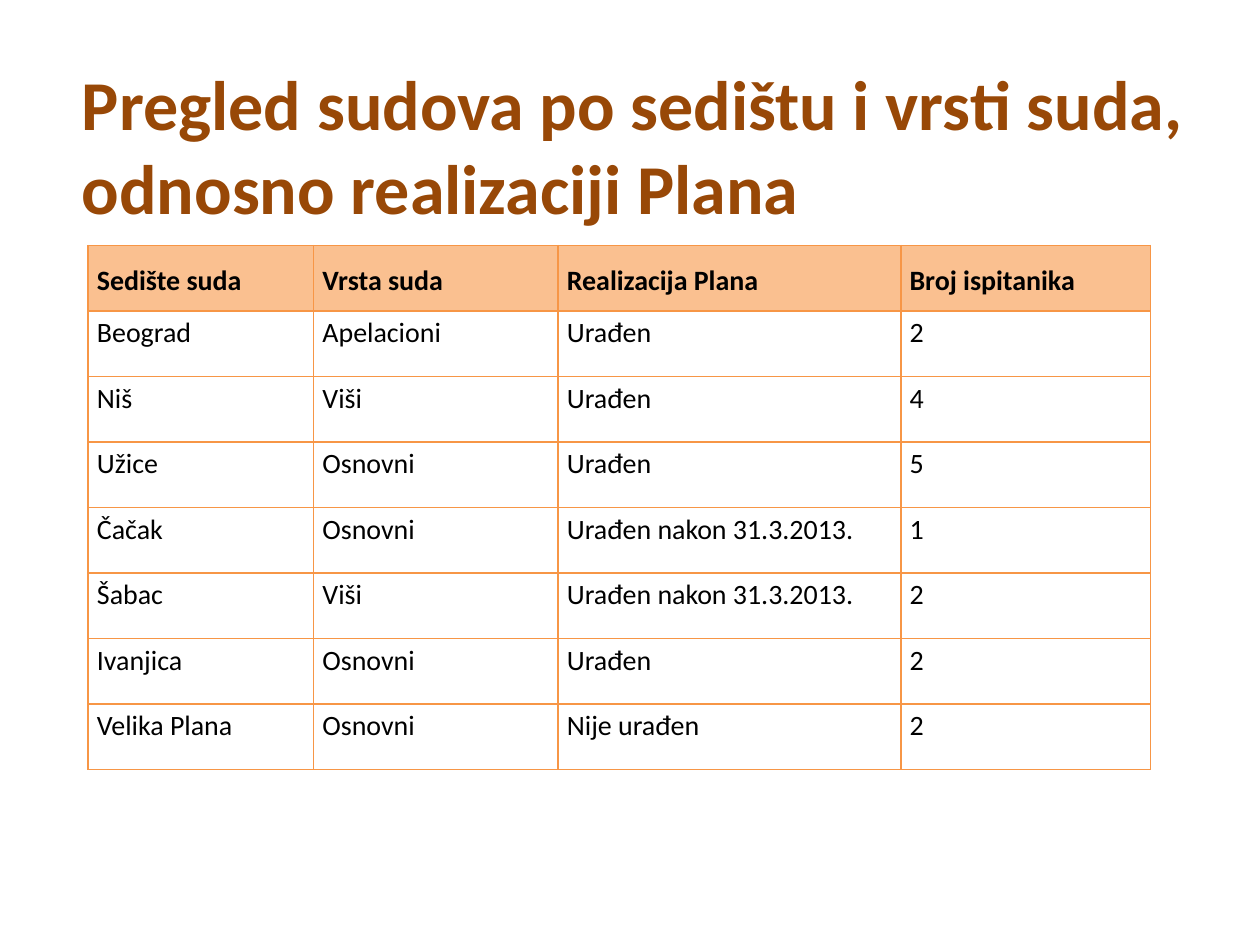
"""Build a slide with a table of courts by seat, type and plan status."""
from itertools import product

from lxml import etree
from pptx import Presentation
from pptx import util as u
from pptx.dml.color import RGBColor
from pptx.enum import text
from pptx.oxml import ns

COLORS = {"title": "984807", "text": "000000", "header": "FAC090", "border": "F79646"}

TITLE = "Pregled sudova po sedištu i vrsti suda, odnosno realizaciji Plana"
COLUMN_WIDTHS = [1.79, 1.94, 2.72, 1.98]
ROWS = [
    ["Sedište suda", "Vrsta suda", "Realizacija Plana", "Broj ispitanika"],
    ["Beograd", "Apelacioni", "Urađen", "2"],
    ["Niš", "Viši", "Urađen", "4"],
    ["Užice", "Osnovni", "Urađen", "5"],
    ["Čačak", "Osnovni", "Urađen nakon 31.3.2013.", "1"],
    ["Šabac", "Viši", "Urađen nakon 31.3.2013.", "2"],
    ["Ivanjica", "Osnovni", "Urađen", "2"],
    ["Velika Plana", "Osnovni", "Nije urađen", "2"],
]


def apply(target, values):
    """Set each named attribute on the target."""
    for name, value in values.items():
        setattr(target, name, value)


class SlideBuilder:
    """Hold the style and the current slide."""

    font_name = "Calibri"
    row_height = 0.52

    def __init__(self, presentation):
        """Add a title-only slide."""
        self.slide = presentation.slides.add_slide(presentation.slide_layouts[5])

    def format_font(self, paragraph, size, color, bold):
        """Format the font of a paragraph."""
        values = {"name": self.font_name, "size": u.Pt(size), "bold": bold}
        apply(paragraph.font, values)
        paragraph.font.color.rgb = RGBColor.from_string(COLORS[color])

    def title(self, wording, left, top, width, height):
        """Place and format the title placeholder."""
        shape = self.slide.shapes.title
        apply(shape, {"left": u.Inches(left), "top": u.Inches(top),
                      "width": u.Inches(width), "height": u.Inches(height)})
        frame = shape.text_frame
        apply(frame, {"text": wording, "word_wrap": True,
                      "auto_size": text.MSO_AUTO_SIZE.NONE,
                      "vertical_anchor": text.MSO_ANCHOR.MIDDLE,
                      "margin_bottom": u.Inches(0.72)})
        paragraph = frame.paragraphs[0]
        paragraph.alignment = text.PP_ALIGN.LEFT
        self.format_font(paragraph, 40, "title", True)

    def borders(self, cell):
        """Draw a one-point line on every side of a cell."""
        properties = cell._tc.get_or_add_tcPr()
        for index, side in enumerate(("lnL", "lnR", "lnT", "lnB")):
            line = etree.Element(ns.qn(f"a:{side}"), w=str(u.Pt(1)))
            fill = etree.SubElement(line, ns.qn("a:solidFill"))
            etree.SubElement(fill, ns.qn("a:srgbClr"), val=COLORS["border"])
            properties.insert(index, line)

    def cell(self, cell, wording, header):
        """Fill and format one table cell."""
        anchor = text.MSO_ANCHOR.MIDDLE if header else text.MSO_ANCHOR.TOP
        apply(cell, {"text": wording, "vertical_anchor": anchor,
                     "margin_left": u.Inches(0.07), "margin_right": u.Inches(0.07),
                     "margin_top": 0, "margin_bottom": 0})
        if header:
            cell.fill.solid()
            cell.fill.fore_color.rgb = RGBColor.from_string(COLORS["header"])
        else:
            cell.fill.background()
        paragraph = cell.text_frame.paragraphs[0]
        paragraph.line_spacing = 1.15
        self.format_font(paragraph, 16, "text", header)
        self.borders(cell)

    def table(self, rows, widths, left, top):
        """Add a table with a filled header row."""
        frame = self.slide.shapes.add_table(
            len(rows), len(widths), u.Inches(left), u.Inches(top),
            u.Inches(sum(widths)), u.Inches(self.row_height * len(rows)))
        table = frame.table
        apply(table, {"first_row": False, "horz_banding": False})
        for column, width in zip(table.columns, widths):
            column.width = u.Inches(width)
        for row, column in product(range(len(rows)), range(len(widths))):
            self.cell(table.cell(row, column), rows[row][column], row == 0)


def main():
    """Build and save the presentation."""
    presentation = Presentation()
    apply(presentation, {"slide_width": u.Inches(10), "slide_height": u.Inches(7.5)})
    builder = SlideBuilder(presentation)
    builder.title(TITLE, 0.55, 0.86, 9, 1.25)
    builder.table(ROWS, COLUMN_WIDTHS, 0.7, 1.95)
    presentation.save("out.pptx")


if __name__ == "__main__":
    main()
